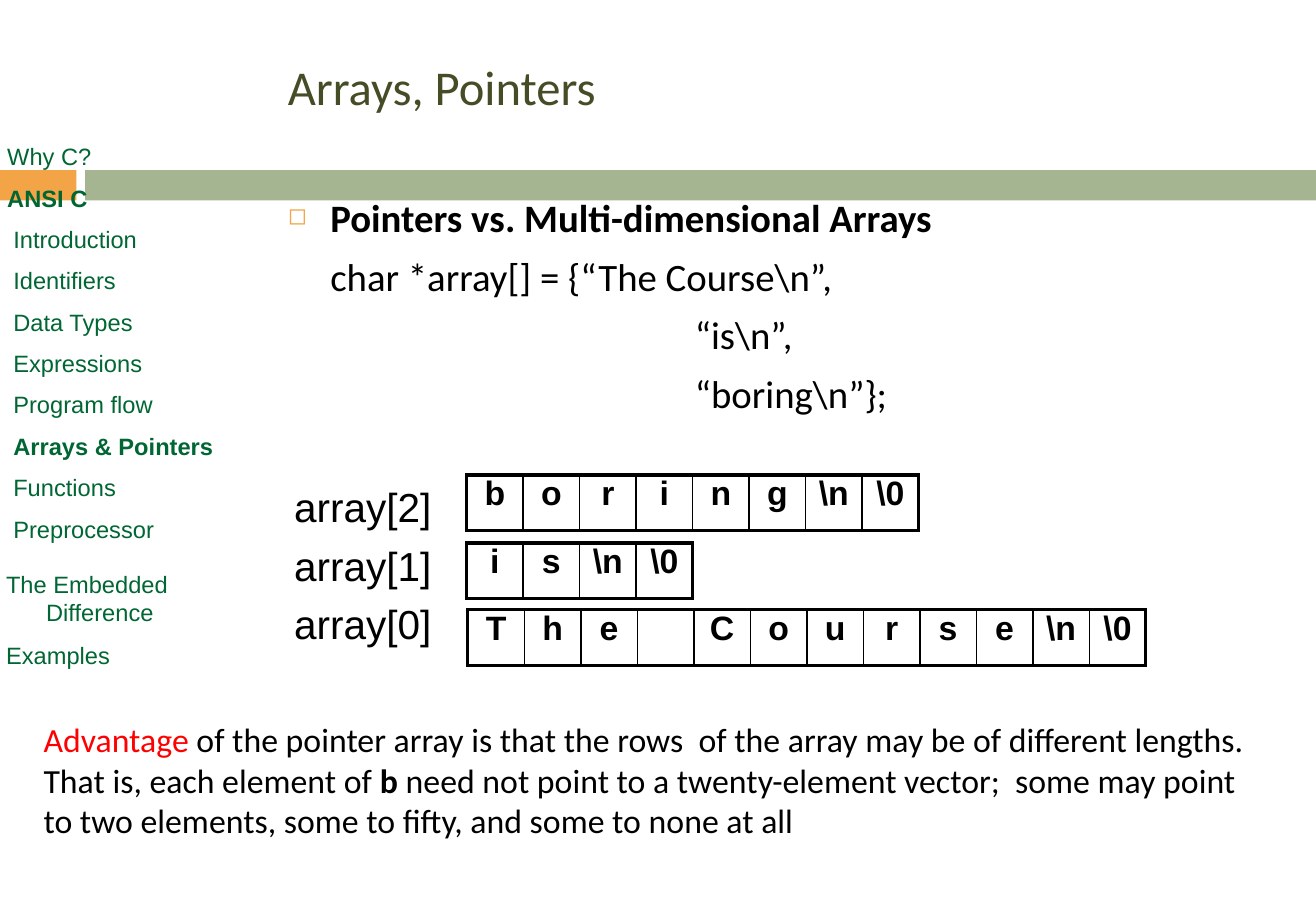
from dataclasses import dataclass

from lxml import etree
from pptx import Presentation
from pptx.dml.color import RGBColor
from pptx.enum.shapes import MSO_SHAPE
from pptx.enum.text import MSO_ANCHOR, PP_ALIGN
from pptx.oxml.ns import qn
from pptx.util import Pt

RECT = MSO_SHAPE.RECTANGLE
TOP, MIDDLE = MSO_ANCHOR.TOP, MSO_ANCHOR.MIDDLE
CENTER = PP_ALIGN.CENTER
PX = 9144  # 100 px to the inch


@dataclass(frozen=True)
class Theme:
    heading: str = "Calibri"
    plain: str = "Arial"
    orange: str = "F3A447"
    sage: str = "A5B592"
    olive: str = "444D26"
    green: str = "006633"
    red: str = "FF0000"
    black: str = "000000"
    title_size: float = 28.8
    body_size: float = 23
    label_size: float = 24
    cell_size: float = 20
    note_size: float = 20
    nav_size: float = 14
    outer_line: float = 2.25
    inner_line: float = 1


T = Theme()

# Lines are (text, indent in px, bold, space before in points)
TITLE = [("Arrays, Pointers", 0, False, 0)]
BODY = [
    ("Pointers vs. Multi-dimensional Arrays", 35, True, 7),
    ("char *array[] = {“The Course\\n”,", 35, False, 7),
    ("“is\\n”,", 335, False, 7),
    ("“boring\\n”};", 335, False, 7),
]
LABELS = [(f"array[{i}]", 0, False, 5.9) for i in (2, 1, 0)]
TOPICS = [("Why C?", 0, False), ("ANSI C", 0, True)] + [
    (topic, 5, topic == "Arrays & Pointers")
    for topic in ("Introduction", "Identifiers", "Data Types", "Expressions",
                  "Program flow", "Arrays & Pointers", "Functions", "Preprocessor")
]
NAV = [(*topic, 7.7) for topic in TOPICS]
NAV_END = [
    ("The Embedded", 5, False, 0),
    ("Difference", 38, False, 0),
    ("Examples", 5, False, 8.4),
]
NOTE = [
    ("Advantage", T.red, False),
    (" of the pointer array is that the rows  of the array may be of different "
     "lengths. That is, each element of ", T.black, False),
    ("b ", T.black, True),
    ("need not point to a twenty-element vector;  some may point to two elements, "
     "some to fifty, and some to none at all", T.black, False),
]
STRINGS = [("boring", 384, 391), ("is", 384, 447), ("The Course", 385, 502)]
ENDING = ["\\n", "\\0"]
CELL_W, CELL_H = 46.5, 46


def px(*lengths):
    return [round(n * PX) for n in lengths]


def style(r, font, size, color, bold):
    r.font.name = font
    r.font.size = Pt(size)
    r.font.bold = bold
    r.font.color.rgb = RGBColor.from_string(color)


def add_box(s, box, anchor=TOP, inset=(10, 5), wrap=True):
    tf = s.shapes.add_textbox(*px(*box)).text_frame
    tf.word_wrap = wrap
    tf.vertical_anchor = anchor
    tf.margin_left = tf.margin_right = inset[0] * PX
    tf.margin_top = tf.margin_bottom = inset[1] * PX
    return tf


def write_lines(tf, lines, font, size, color):
    for i, (text, indent, bold, before) in enumerate(lines):
        p = tf.add_paragraph() if i else tf.paragraphs[0]
        p.text = text
        p.space_before = Pt(before)
        p._p.get_or_add_pPr().set("marL", str(indent * PX))
        style(p.runs[0], font, size, color, bold)


def add_bullet(p, indent):
    pPr = p._p.get_or_add_pPr()
    pPr.set("indent", str(-indent * PX))
    color = etree.SubElement(pPr, qn("a:buClr"))
    etree.SubElement(color, qn("a:srgbClr"), val=T.orange)
    etree.SubElement(pPr, qn("a:buSzPct"), val="60000")
    etree.SubElement(pPr, qn("a:buChar"), char="◻")


def add_borders(cell, first, last):
    widths = {
        "L": T.outer_line if first else T.inner_line,
        "R": T.outer_line if last else T.inner_line,
        "T": T.outer_line,
        "B": T.outer_line,
    }
    tcPr = cell._tc.get_or_add_tcPr()
    for i, (side, width) in enumerate(widths.items()):
        ln = etree.Element(qn(f"a:ln{side}"), w=str(Pt(width)))
        fill = etree.SubElement(ln, qn("a:solidFill"))
        etree.SubElement(fill, qn("a:srgbClr"), val=T.black)
        tcPr.insert(i, ln)


def add_string(s, text, left, top):
    """Draw a C string as a one-row table, one character a cell."""
    chars = [*text, *ENDING]
    box = px(left, top, CELL_W * len(chars), CELL_H)
    table = s.shapes.add_table(1, len(chars), *box).table
    table.first_row = table.horz_banding = False
    for i, char in enumerate(chars):
        table.columns[i].width = px(CELL_W)[0]
        cell = table.cell(0, i)
        cell.margin_left = cell.margin_right = 0
        cell.margin_top = cell.margin_bottom = 0
        cell.fill.background()
        add_borders(cell, i == 0, i == len(chars) - 1)
        cell.text = char.strip()
        p = cell.text_frame.paragraphs[0]
        p.alignment = CENTER
        for r in p.runs:
            style(r, T.plain, T.cell_size, T.black, True)


def main():
    prs = Presentation()
    prs.slide_width, prs.slide_height = px(1083, 750)
    s = prs.slides.add_slide(prs.slide_layouts[6])

    for left, width, color in ((0, 63, T.orange), (70, 1013, T.sage)):
        bar = s.shapes.add_shape(RECT, *px(left, 140, width, 25))
        bar.shadow.inherit = False
        bar.fill.solid()
        bar.fill.fore_color.rgb = RGBColor.from_string(color)
        bar.line.fill.background()

    tf = add_box(s, (227, 51, 757, 40), MIDDLE)
    write_lines(tf, TITLE, T.heading, T.title_size, T.olive)

    tf = add_box(s, (227, 155, 757, 190))
    write_lines(tf, BODY, T.heading, T.body_size, T.black)
    add_bullet(tf.paragraphs[0], 35)

    for text, left, top in STRINGS:
        add_string(s, text, left, top)
    tf = add_box(s, (242, 397, 113, 136), inset=(0, 0), wrap=False)
    write_lines(tf, LABELS, T.plain, T.label_size, T.black)

    tf = add_box(s, (6, 117, 187, 342), inset=(0, 0))
    write_lines(tf, NAV, T.plain, T.nav_size, T.green)
    tf = add_box(s, (0, 469, 187, 82), inset=(0, 0))
    write_lines(tf, NAV_END, T.plain, T.nav_size, T.green)

    p = add_box(s, (26, 587, 1031, 111)).paragraphs[0]
    for text, color, bold in NOTE:
        r = p.add_run()
        r.text = text
        style(r, T.heading, T.note_size, color, bold)

    prs.save("out.pptx")


if __name__ == "__main__":
    main()
